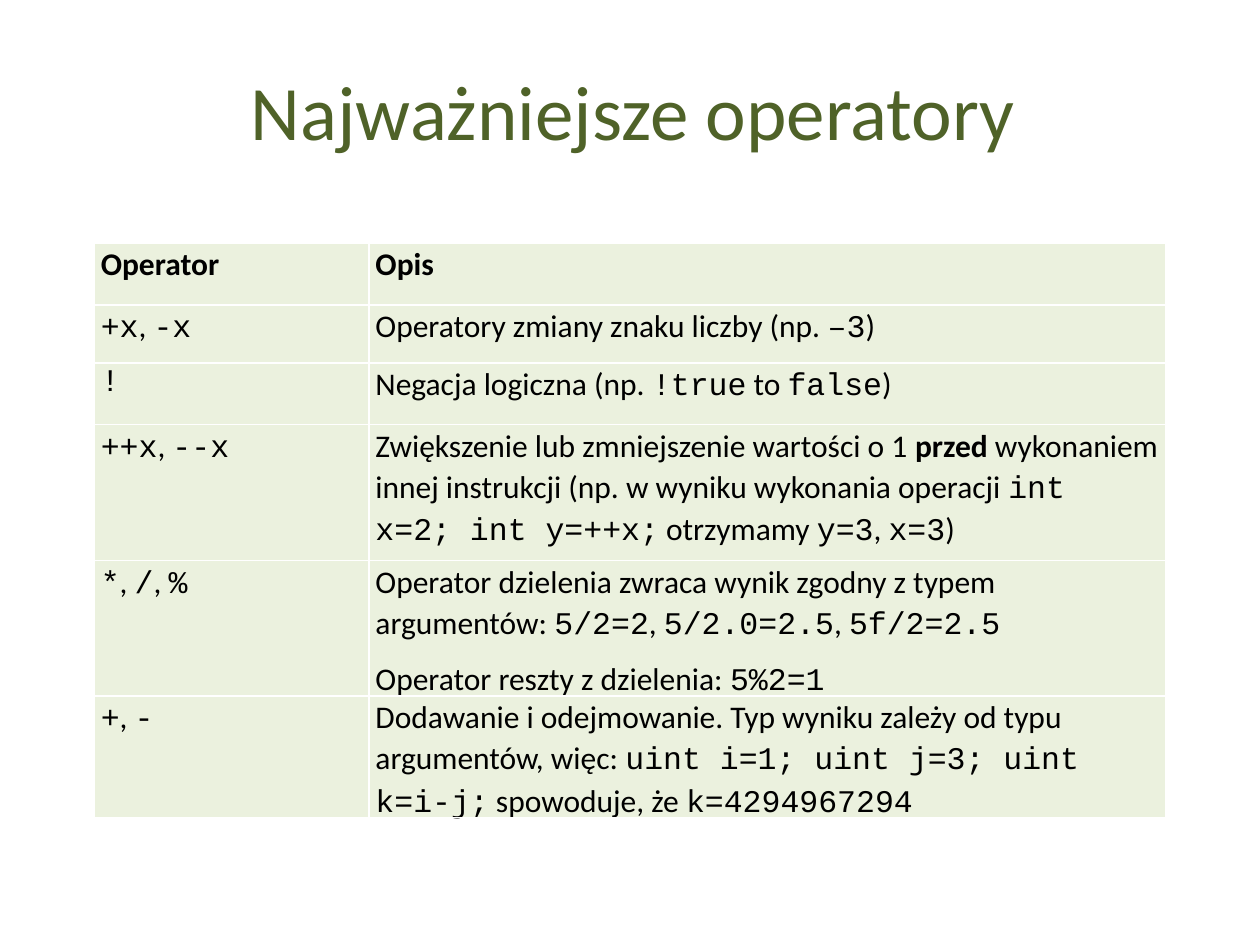
from dataclasses import dataclass

from lxml.etree import SubElement
from pptx import Presentation
from pptx.dml.color import RGBColor
from pptx.enum.text import MSO_ANCHOR, PP_ALIGN
from pptx.oxml.ns import qn
from pptx.util import Inches, Pt


@dataclass(frozen=True)
class Theme:
    title_color: str = "4F6228"
    text_color: str = "000000"
    cell_fill: str = "EBF1DE"
    border_color: str = "FFFFFF"
    border_width: float = 1
    title_size: float = 44
    body_size: float = 18
    text_font: str = "Calibri"
    code_font: str = "Courier New"


@dataclass(frozen=True)
class OperatorRow:
    """One table row; `code` and **bold** mark formatted parts."""
    operator: str
    description: tuple[str, ...]
    height: float


THEME = Theme()
SLIDE_WIDTH, SLIDE_HEIGHT = 10, 7.5
TABLE_LEFT, TABLE_TOP = 0.075 * SLIDE_WIDTH, 1.93
COLUMN_WIDTHS = (2.18, 6.32)

ROWS = (
    OperatorRow("**Operator**", ("**Opis**",), 0.49),
    OperatorRow("`+x`, `-x`", ("Operatory zmiany znaku liczby (np. `–3`)",), 0.46),
    OperatorRow("`!`", ("Negacja logiczna (np. `!true` to `false`)",), 0.49),
    OperatorRow("`++x`, `--x`", (
        "Zwiększenie lub zmniejszenie wartości o 1 **przed** wykonaniem innej "
        "instrukcji (np. w wyniku wykonania operacji `int x=2; int y=++x;` "
        "otrzymamy `y=3`, `x=3`)",), 1.08),
    OperatorRow("`*`, `/`, `%`", (
        "Operator dzielenia zwraca wynik zgodny z typem argumentów: "
        "`5/2=2`, `5/2.0=2.5`, `5f/2=2.5`",
        "Operator reszty z dzielenia: `5%2=1`"), 0.87),
    OperatorRow("`+`, `-`", (
        "Dodawanie i odejmowanie. Typ wyniku zależy od typu argumentów, więc: "
        "`uint i=1; uint j=3; uint k=i-j;` spowoduje, że `k=4294967294`",), 0.87),
)


def add_run(paragraph, text: str, *, size: float = THEME.body_size,
            color: str = THEME.text_color, font: str = THEME.text_font,
            bold: bool = False) -> None:
    run = paragraph.add_run()
    run.text = text
    run.font.size = Pt(size)
    run.font.name = font
    run.font.bold = bold
    run.font.color.rgb = RGBColor.from_string(color)


def add_marked_text(paragraph, text: str) -> None:
    """Turn the `code` and **bold** marks into runs."""
    for index, part in enumerate(text.split("`")):
        if index % 2:
            add_run(paragraph, part, font=THEME.code_font)
            continue
        for inner_index, piece in enumerate(part.split("**")):
            if piece:
                add_run(paragraph, piece, bold=inner_index % 2 == 1)


def set_borders(cell) -> None:
    properties = cell._tc.get_or_add_tcPr()
    for position, side in enumerate(("lnL", "lnR", "lnT", "lnB")):
        line = SubElement(properties, qn(f"a:{side}"), w=str(Pt(THEME.border_width)))
        fill = SubElement(line, qn("a:solidFill"))
        SubElement(fill, qn("a:srgbClr"), val=THEME.border_color)
        properties.insert(position, line)  # borders come before the fill


def fill_cell(cell, paragraphs: tuple[str, ...]) -> None:
    cell.margin_left = cell.margin_right = Inches(0.05)
    cell.margin_top = cell.margin_bottom = 0
    cell.fill.solid()
    cell.fill.fore_color.rgb = RGBColor.from_string(THEME.cell_fill)
    set_borders(cell)
    frame = cell.text_frame
    for index, text in enumerate(paragraphs):
        paragraph = frame.add_paragraph() if index else frame.paragraphs[0]
        paragraph.line_spacing = 1.07
        paragraph.space_after = Pt(8)
        add_marked_text(paragraph, text)


def add_title(slide, text: str) -> None:
    box = slide.shapes.add_textbox(Inches(0.2), Inches(0.51), Inches(9.65), Inches(0.72))
    frame = box.text_frame
    frame.word_wrap = True
    frame.vertical_anchor = MSO_ANCHOR.MIDDLE
    paragraph = frame.paragraphs[0]
    paragraph.alignment = PP_ALIGN.CENTER
    add_run(paragraph, text, size=THEME.title_size, color=THEME.title_color)


def add_operator_table(slide, rows: tuple[OperatorRow, ...]) -> None:
    table = slide.shapes.add_table(
        len(rows), len(COLUMN_WIDTHS), Inches(TABLE_LEFT), Inches(TABLE_TOP),
        Inches(sum(COLUMN_WIDTHS)), Inches(sum(row.height for row in rows))).table
    for column, width in zip(table.columns, COLUMN_WIDTHS):
        column.width = Inches(width)
    for index, row in enumerate(rows):
        table.rows[index].height = Inches(row.height)
        fill_cell(table.cell(index, 0), (row.operator,))
        fill_cell(table.cell(index, 1), row.description)


def main() -> None:
    presentation = Presentation()
    presentation.slide_width = Inches(SLIDE_WIDTH)
    presentation.slide_height = Inches(SLIDE_HEIGHT)
    slide = presentation.slides.add_slide(presentation.slide_layouts[6])
    # Heading
    add_title(slide, "Najważniejsze operatory")
    # Operators and their descriptions
    add_operator_table(slide, ROWS)
    presentation.save("out.pptx")


if __name__ == "__main__":
    main()
